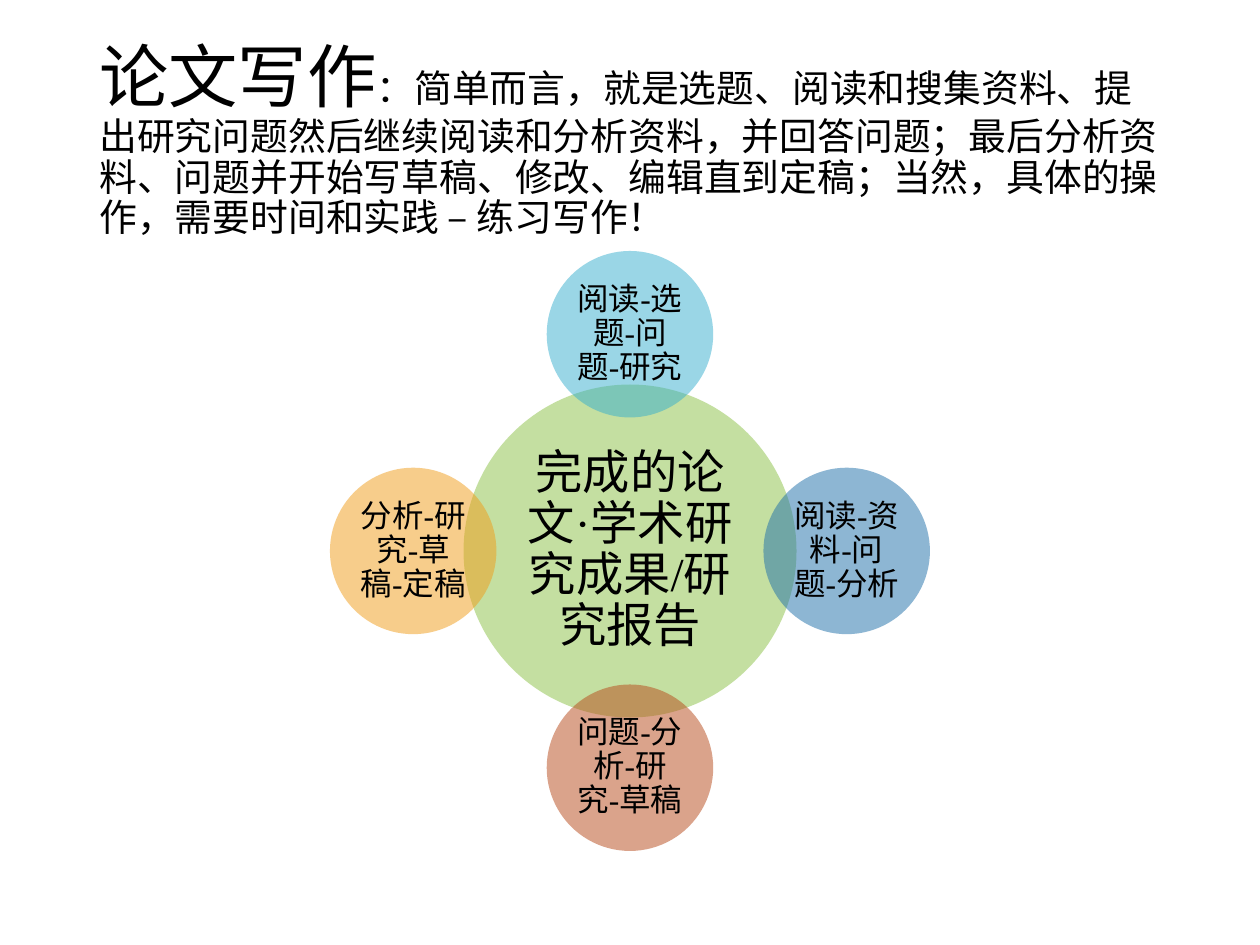
from pptx import Presentation
from pptx.dml.color import RGBColor
from pptx.enum.lang import MSO_LANGUAGE_ID
from pptx.enum.shapes import MSO_SHAPE
from pptx.enum.text import MSO_ANCHOR, PP_ALIGN
from pptx.oxml.ns import qn
from pptx.util import Pt
from lxml import etree

PX = 914400 / 126
OVAL = MSO_SHAPE.OVAL
MIDDLE = MSO_ANCHOR.MIDDLE
CENTER = PP_ALIGN.CENTER
CHINESE = MSO_LANGUAGE_ID.SIMPLIFIED_CHINESE
FONT = "Times New Roman"
COLORS = {
    "text": "000000",
    "green": "8BC145",
    "cyan": "36AFCE",
    "blue": "1D6FA9",
    "rust": "B74919",
    "orange": "F19D19",
}
HEADING = "论文写作"
SUMMARY = (
    "：简单而言，就是选题、阅读和搜集资料、提出研究问题然后继续阅读和分析资料，"
    "并回答问题；最后分析资料、问题并开始写草稿、修改、编辑直到定稿；"
    "当然，具体的操作，需要时间和实践 – 练习写作！"
)
RESULT = "完成的论文·学术研究成果/研究报告"
STAGES = [
    ("阅读-选题-问题-研究", "cyan", 0, -1),
    ("阅读-资料-问题-分析", "blue", 1, 0),
    ("问题-分析-研究-草稿", "rust", 0, 1),
    ("分析-研究-草稿-定稿", "orange", -1, 0),
]


def px(length):
    """Convert a length in px to EMU."""
    return round(length * PX)


def style_span(span, size):
    """Give a run its font, size, colour and language."""
    span.font.name = FONT
    span.font.size = Pt(size)
    span.font.color.rgb = RGBColor.from_string(COLORS["text"])
    span.font.language_id = CHINESE


def add_title(page, left, top, width, height):
    """Place the heading and its summary in one paragraph."""
    box = page.shapes.add_textbox(px(left), px(top), px(width), px(height))
    frame = box.text_frame
    frame.word_wrap = True
    frame.vertical_anchor = MIDDLE
    para = frame.paragraphs[0]
    para.line_spacing = 0.9
    for words, size in ((HEADING, 39.6), (SUMMARY, 21.6)):
        span = para.add_run()
        span.text = words
        style_span(span, size)


def add_circle(page, center_x, center_y, diameter, color, words, size, inset):
    """Draw a half-transparent circle with centred text."""
    circle = page.shapes.add_shape(
        OVAL, px(center_x - diameter / 2), px(center_y - diameter / 2),
        px(diameter), px(diameter))
    circle.shadow.inherit = False
    circle.line.fill.background()
    circle.fill.solid()
    circle.fill.fore_color.rgb = RGBColor.from_string(COLORS[color])
    tint = next(circle.element.spPr.iter(qn("a:srgbClr")))
    etree.SubElement(tint, qn("a:alpha"), val="50000")

    frame = circle.text_frame
    frame.word_wrap = True
    frame.vertical_anchor = MIDDLE
    frame.margin_left = frame.margin_right = px(inset)
    frame.margin_top = frame.margin_bottom = px(inset)
    frame.text = words
    para = frame.paragraphs[0]
    para.alignment = CENTER
    para.line_spacing = 0.9
    style_span(para.runs[0], size)


def add_radial_diagram(page, left, top, side):
    """Place the result circle and the four stages around it."""
    middle_x, middle_y = left + side / 2, top + side / 2
    hub = round(side * 5 / 9)
    satellite = hub / 2
    orbit = (side - satellite) / 2
    add_circle(page, middle_x, middle_y, hub, "green", RESULT, 27, 5)
    for words, color, step_x, step_y in STAGES:
        add_circle(page, middle_x + step_x * orbit, middle_y + step_y * orbit,
                   satellite, color, words, 18, 4)


def main():
    """Build the slide and save the deck."""
    deck = Presentation()
    deck.slide_width, deck.slide_height = px(1260), px(945)
    page = deck.slides.add_slide(deck.slide_layouts[6])
    add_title(page, 87, 50, 1086, 183)
    add_radial_diagram(page, 330, 251, 600)
    deck.save("out.pptx")


if __name__ == "__main__":
    main()
